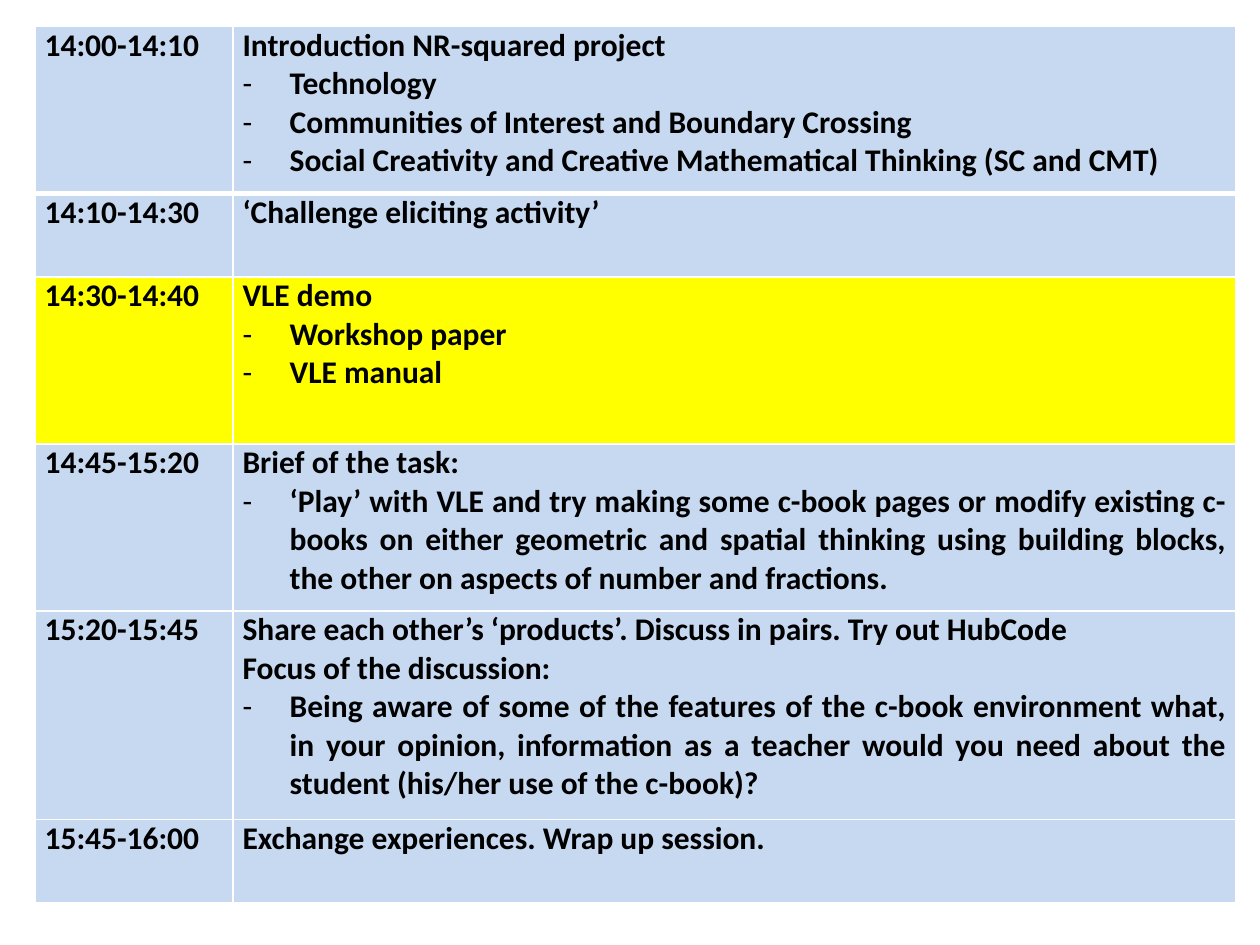
import pptx
import pptx.dml.color
import pptx.enum.text
import pptx.oxml.ns
import pptx.util
import lxml.etree

Cm = pptx.util.Cm
BLUE, YELLOW, WHITE, BLACK = "C6D9F1", "FFFF00", "FFFFFF", "000000"
TABLE_HEIGHT = 17.68
COLUMN_WIDTHS = (3.99, 20.22)
FONT_FORMAT = {"name": "Calibri", "size": pptx.util.Pt(18), "bold": True}
CELL_FORMAT = {
    "margin_left": Cm(0.19),
    "margin_right": Cm(0.19),
    "margin_top": 0,
    "margin_bottom": 0,
}
TABLE_FORMAT = {"first_row": False, "horz_banding": False}

# time, height in lines, fill, headings, bullets
AGENDA = [
    ("14:00-14:10", 4, BLUE, ["Introduction NR-squared project"],
     ["Technology",
      "Communities of Interest and Boundary Crossing",
      "Social Creativity and Creative Mathematical Thinking (SC and CMT)"]),
    ("14:10-14:30", 2, BLUE, ["‘Challenge eliciting activity’"], []),
    ("14:30-14:40", 4, YELLOW, ["VLE demo"], ["Workshop paper", "VLE manual"]),
    ("14:45-15:20", 4, BLUE, ["Brief of the task:"],
     ["‘Play’ with VLE and try making some c-book pages or modify existing "
      "c-books on either geometric and spatial thinking using building blocks, "
      "the other on aspects of number and fractions."]),
    ("15:20-15:45", 5, BLUE,
     ["Share each other’s ‘products’. Discuss in pairs. Try out HubCode",
      "Focus of the discussion:"],
     ["Being aware of some of the features of the c-book environment what, "
      "in your opinion, information as a teacher would you need about the "
      "student (his/her use of the c-book)?"]),
    ("15:45-16:00", 2, BLUE, ["Exchange experiences. Wrap up session."], []),
]


def color(hex_string):
    return pptx.dml.color.RGBColor.from_string(hex_string)


def apply_format(target, values):
    for name, value in values.items():
        setattr(target, name, value)


def add_element(parent, tag, **attributes):
    return lxml.etree.SubElement(parent, pptx.oxml.ns.qn(tag), attributes)


def add_bullet(paragraph):
    properties = paragraph._p.get_or_add_pPr()
    properties.set("marL", str(Cm(0.95)))
    properties.set("indent", str(-Cm(0.95)))
    add_element(properties, "a:buFont", typeface="Calibri")
    add_element(properties, "a:buChar", char="-")


def set_borders(cell, top, bottom):
    properties = cell._tc.get_or_add_tcPr()
    for side, points in (("L", 1), ("R", 1), ("T", top), ("B", bottom)):
        line = add_element(properties, "a:ln" + side, w=str(pptx.util.Pt(points)))
        fill = add_element(line, "a:solidFill")
        add_element(fill, "a:srgbClr", val=WHITE)


def fill_cell(cell, fill, headings, bullets=()):
    apply_format(cell, CELL_FORMAT)
    cell.fill.solid()
    cell.fill.fore_color.rgb = color(fill)
    for index, text in enumerate([*headings, *bullets]):
        text_frame = cell.text_frame
        paragraph = text_frame.add_paragraph() if index else text_frame.paragraphs[0]
        paragraph.alignment = pptx.enum.text.PP_ALIGN.JUSTIFY
        if index >= len(headings):
            add_bullet(paragraph)
        run = paragraph.add_run()
        run.text = text
        apply_format(run.font, FONT_FORMAT)
        run.font.color.rgb = color(BLACK)


def add_agenda(slide):
    table = slide.shapes.add_table(
        len(AGENDA), len(COLUMN_WIDTHS), Cm(0.71), Cm(0.53),
        Cm(sum(COLUMN_WIDTHS)), Cm(TABLE_HEIGHT)).table
    apply_format(table, TABLE_FORMAT)
    for column, width in zip(table.columns, COLUMN_WIDTHS):
        column.width = Cm(width)
    line_height = TABLE_HEIGHT / sum(entry[1] for entry in AGENDA)
    for index, (time, lines, fill, headings, bullets) in enumerate(AGENDA):
        row = table.rows[index]
        row.height = Cm(lines * line_height)
        for cell in row.cells:
            set_borders(cell, 3 if index == 1 else 1, 3 if index == 0 else 1)
        fill_cell(row.cells[0], fill, [time])
        fill_cell(row.cells[1], fill, headings, bullets)


def main():
    presentation = pptx.Presentation()
    apply_format(presentation, {"slide_width": Cm(25.4), "slide_height": Cm(19.05)})
    slide = presentation.slides.add_slide(presentation.slide_layouts[6])
    add_agenda(slide)
    presentation.save("out.pptx")


if __name__ == "__main__":
    main()
